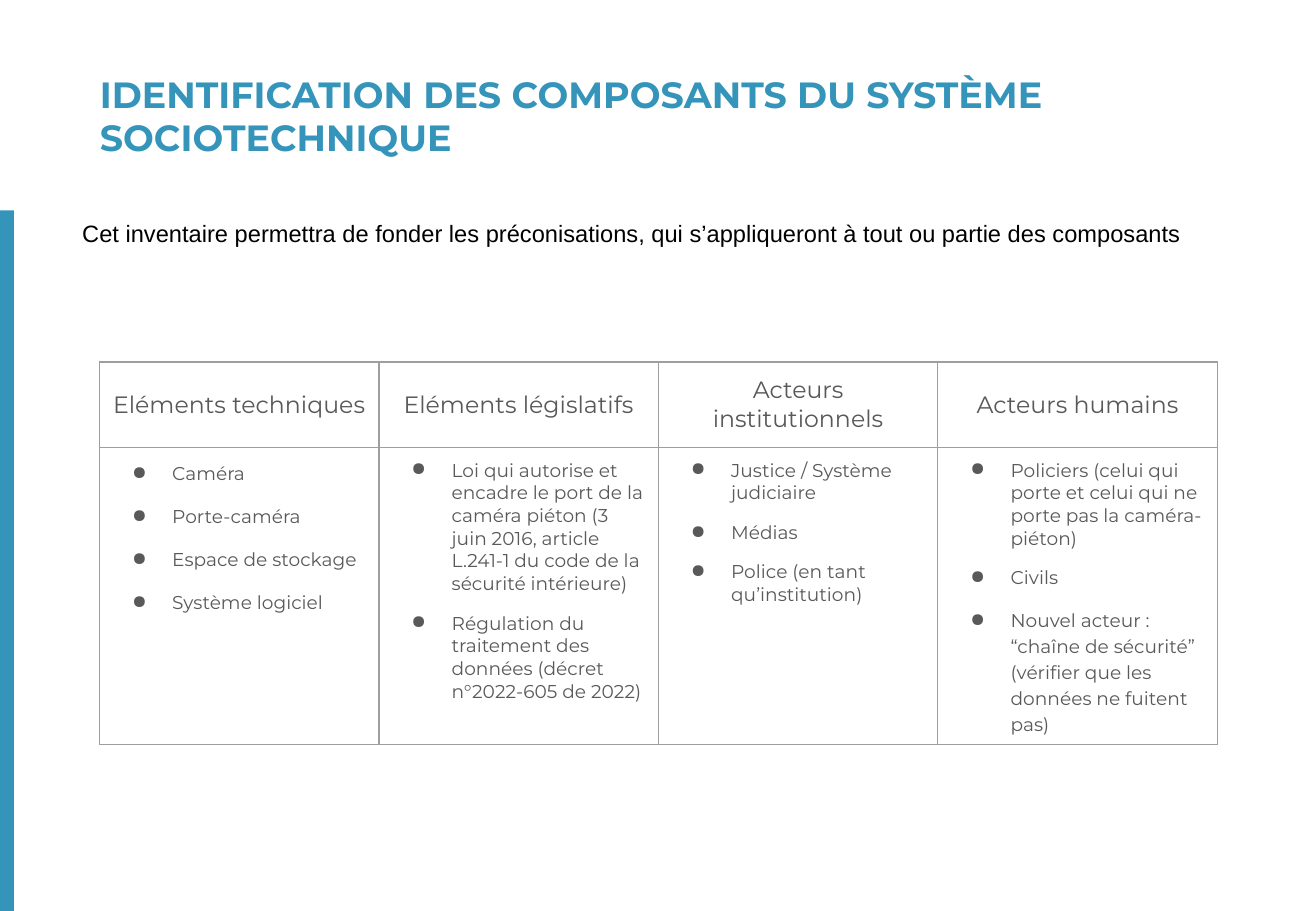
from dataclasses import dataclass

from lxml.etree import SubElement
from pptx import Presentation
from pptx.dml.color import RGBColor
from pptx.enum.shapes import MSO_SHAPE
from pptx.enum.text import MSO_ANCHOR, PP_ALIGN
from pptx.oxml import parse_xml
from pptx.oxml.ns import nsdecls, qn
from pptx.util import Cm, Pt


@dataclass(frozen=True)
class Theme:
    accent: str = "3494BA"
    ink: str = "000000"
    grey: str = "595959"
    border: str = "9E9E9E"
    heading_font: str = "Montserrat"
    plain_font: str = "Arial"
    title_size: float = 21.6
    lead_size: float = 14
    item_size: float = 11
    border_width: float = 0.75


THEME = Theme()
TITLE = "IDENTIFICATION DES COMPOSANTS DU SYSTÈME SOCIOTECHNIQUE"
LEAD = ("Cet inventaire permettra de fonder les préconisations, "
        "qui s’appliqueront à tout ou partie des composants")

# Each component: heading, then items with their line spacing
COMPONENTS = [
    ("Eléments techniques", [
        ("Caméra", 1.15),
        ("Porte-caméra", 1.15),
        ("Espace de stockage", 1.15),
        ("Système logiciel", 1.15)]),
    ("Eléments législatifs", [
        ("Loi qui autorise et encadre le port de la caméra piéton (3 juin 2016, "
         "article L.241-1 du code de la sécurité intérieure)", 1.0),
        ("Régulation du traitement des données (décret n°2022-605 de 2022)", 1.0)]),
    ("Acteurs institutionnels", [
        ("Justice / Système judiciaire", 1.0),
        ("Médias", 1.0),
        ("Police (en tant qu’institution)", 1.0)]),
    ("Acteurs humains", [
        ("Policiers (celui qui porte et celui qui ne porte pas la caméra-piéton)", 1.0),
        ("Civils", 1.0),
        ("Nouvel acteur : “chaîne de sécurité” (vérifier que les données "
         "ne fuitent pas)", 1.15)]),
]


def apply(target, values):
    for name, value in values.items():
        setattr(target, name, value)


def write(paragraph, text, font, size, color, bold=False):
    run = paragraph.add_run()
    run.text = text
    apply(run.font, {"name": font, "size": Pt(size), "bold": bold})
    run.font.color.rgb = RGBColor.from_string(color)


def add_side_bar(slide, box):
    bar = slide.shapes.add_shape(MSO_SHAPE.RECTANGLE, *box)
    bar.shadow.inherit = False
    bar.fill.solid()
    bar.fill.fore_color.rgb = RGBColor.from_string(THEME.accent)
    bar.line.fill.background()


def add_title(slide, box):
    frame = slide.shapes.add_textbox(*box).text_frame
    apply(frame, {"word_wrap": True, "margin_top": 0, "margin_bottom": 0})
    write(frame.paragraphs[0], TITLE, THEME.heading_font, THEME.title_size,
          THEME.accent, bold=True)


def add_lead(slide, box):
    frame = slide.shapes.add_textbox(*box).text_frame
    frame.word_wrap = False
    write(frame.paragraphs[0], LEAD, THEME.plain_font, THEME.lead_size, THEME.ink)


def format_cell(cell, anchor):
    margin = Cm(0.25)
    apply(cell, {"margin_left": margin, "margin_right": margin, "margin_top": margin,
                 "margin_bottom": margin, "vertical_anchor": anchor})
    cell.fill.background()
    properties = cell._tc.get_or_add_tcPr()
    for position, side in enumerate(("lnL", "lnR", "lnT", "lnB")):
        properties.insert(position, parse_xml(
            f'<a:{side} {nsdecls("a")} w="{Pt(THEME.border_width)}"><a:solidFill>'
            f'<a:srgbClr val="{THEME.border}"/></a:solidFill></a:{side}>'))


def add_bullet(paragraph):
    properties = paragraph._p.get_or_add_pPr()
    properties.set("marL", str(Cm(1.27)))
    properties.set("indent", str(Cm(-0.84)))
    color = SubElement(properties, qn("a:buClr"))
    SubElement(color, qn("a:srgbClr")).set("val", THEME.grey)
    SubElement(properties, qn("a:buChar")).set("char", "●")


def fill_items(cell, items):
    frame = cell.text_frame
    for index, (text, spacing) in enumerate(items):
        paragraph = frame.add_paragraph() if index else frame.paragraphs[0]
        add_bullet(paragraph)
        apply(paragraph, {"line_spacing": spacing, "space_before": Pt(10 if index else 0),
                          "space_after": Pt(0)})
        write(paragraph, text, THEME.heading_font, THEME.item_size, THEME.grey)
    paragraph.space_after = Pt(10)


def add_components(slide, box):
    left, top, width, height = box
    table = slide.shapes.add_table(2, len(COMPONENTS), left, top, width, height).table
    apply(table, {"first_row": False, "horz_banding": False})
    heading_height = Cm(1.78)
    table.rows[0].height = heading_height
    table.rows[1].height = height - heading_height
    for column, (heading, items) in enumerate(COMPONENTS):
        heading_cell, items_cell = table.cell(0, column), table.cell(1, column)
        format_cell(heading_cell, MSO_ANCHOR.MIDDLE)
        format_cell(items_cell, MSO_ANCHOR.TOP)
        paragraph = heading_cell.text_frame.paragraphs[0]
        paragraph.alignment = PP_ALIGN.CENTER
        write(paragraph, heading, THEME.heading_font, THEME.lead_size, THEME.grey)
        fill_items(items_cell, items)


def main():
    deck = Presentation()
    apply(deck, {"slide_width": Cm(27.51), "slide_height": Cm(19.05)})
    slide = deck.slides.add_slide(deck.slide_layouts[6])
    bar_top = Cm(4.4)
    add_side_bar(slide, (0, bar_top, Cm(0.29), deck.slide_height - bar_top))
    add_lead(slide, (Cm(1.47), Cm(4.45), Cm(23.57), Cm(0.86)))
    add_title(slide, (Cm(1.84), Cm(1.5), Cm(23.95), Cm(1.88)))
    add_components(slide, (Cm(2.08), Cm(7.57), Cm(23.37), Cm(7.95)))
    deck.save("out.pptx")


if __name__ == "__main__":
    main()
